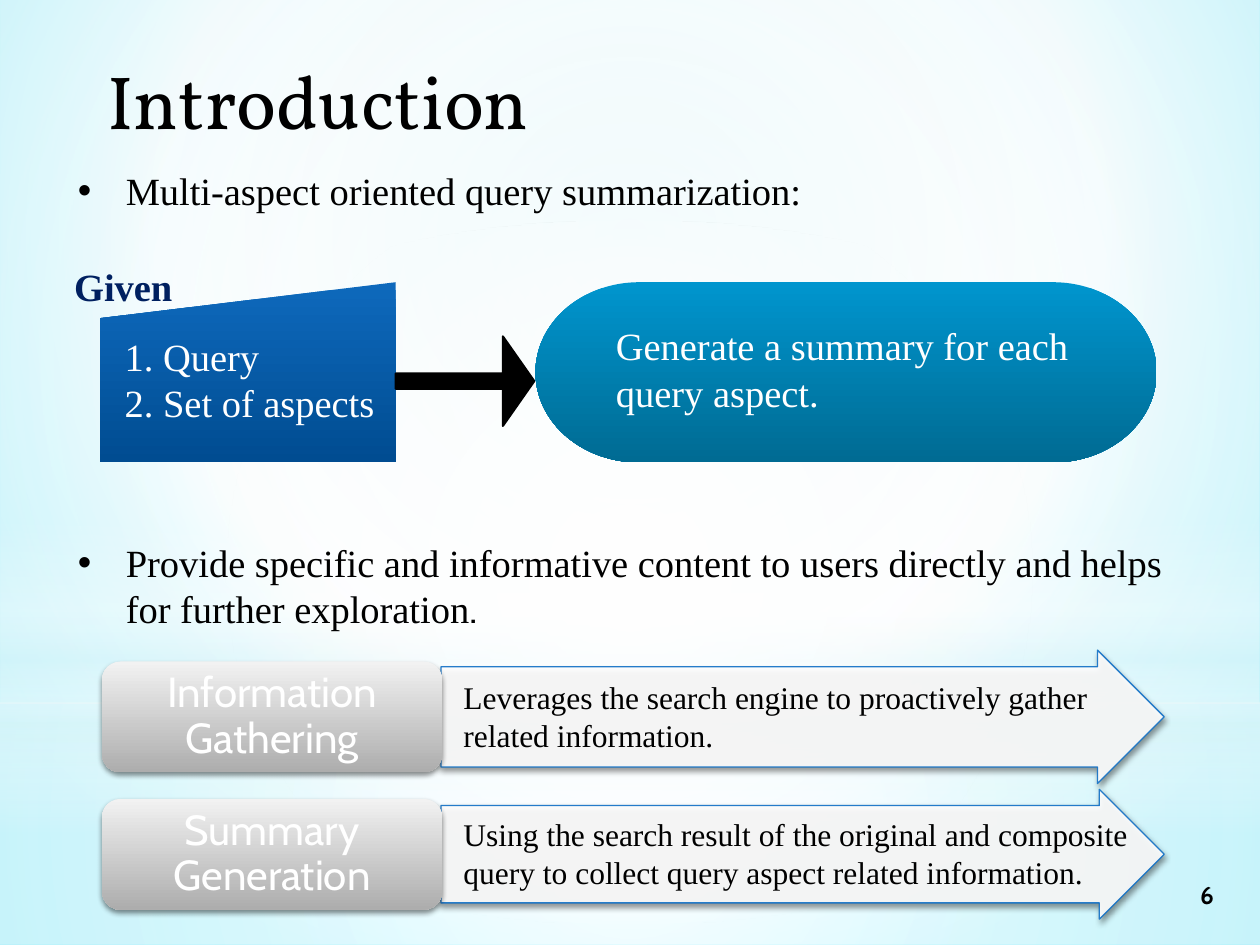
from lxml import etree
from pptx import Presentation
from pptx.dml.color import RGBColor
from pptx.enum.shapes import MSO_SHAPE as Shape
from pptx.enum.text import MSO_ANCHOR as Anchor, MSO_AUTO_SIZE as AutoSize, PP_ALIGN as Align
from pptx.oxml.ns import qn
from pptx.util import Inches, Pt

COLORS = {"black": "000000", "white": "FFFFFF", "navy": "002060", "outline": "0F6FC6",
          "sky": "CAF0F6", "cyan": "79EDFF", "mist": "DBF5F9",
          "blue": "0E69BC", "deep blue": "004C91", "teal": "0095CE", "deep teal": "006B93",
          "silver": "F2F2F2", "gray": "ADADAD"}
SERIF, SANS = "Times New Roman", "Cabin"


def set_gradient(fill, owner, stops, center=None):
    """Stops are (position, color, opacity); center gives a circular gradient."""
    fill.gradient()
    gradient = owner.find(".//" + qn("a:gradFill"))
    for child in list(gradient):
        gradient.remove(child)
    stop_list = etree.SubElement(gradient, qn("a:gsLst"))
    for position, color, opacity in stops:
        stop = etree.SubElement(stop_list, qn("a:gs"), pos=str(position * 1000))
        rgb = etree.SubElement(stop, qn("a:srgbClr"), val=COLORS[color])
        if opacity < 100:
            etree.SubElement(rgb, qn("a:alpha"), val=str(opacity * 1000))
    if center:
        path = etree.SubElement(gradient, qn("a:path"), path="circle")
        sides = {side: str(value * 1000) for side, value in zip("ltrb", center)}
        etree.SubElement(path, qn("a:fillToRect"), **sides)
    else:
        etree.SubElement(gradient, qn("a:lin"), ang="5400000", scaled="0")


def write_text(shape, lines, size, color="black", font=SERIF, bold=False,
               align=Align.LEFT, anchor=Anchor.TOP, wrap=True):
    frame = shape.text_frame
    frame.auto_size = AutoSize.NONE
    frame.word_wrap = wrap
    frame.vertical_anchor = anchor
    frame.text = "\n".join(lines)
    for paragraph in frame.paragraphs:
        paragraph.alignment = align
        paragraph.font.name = font
        paragraph.font.size = Pt(size)
        paragraph.font.bold = bold
        paragraph.font.color.rgb = RGBColor.from_string(COLORS[color])
    return frame


presentation = Presentation()
presentation.slide_width, presentation.slide_height = Inches(10), Inches(7.5)
slide = presentation.slides.add_slide(presentation.slide_layouts[5])
shapes = slide.shapes

# Background with soft light layers
set_gradient(slide.background.fill, slide.element,
             [(0, "sky", 100), (60, "white", 100), (100, "cyan", 100)], (20, 10, 20, 60))
middle = (50, 50, 50, 50)
layers = [
    (Shape.RECTANGLE, 5.58, 1.92, middle, [(0, "white", 91), (37, "white", 76), (100, "mist", 79)]),
    (Shape.RECTANGLE, 0, 5.58, middle, [(0, "white", 89), (48, "white", 62), (100, "mist", 79)]),
    (Shape.RECTANGLE, 4.12, 2.5, None, [(0, "white", 0), (29, "white", 30), (45, "mist", 40),
                                        (55, "white", 26), (65, "mist", 60), (100, "white", 0)]),
    (Shape.OVAL, 1.75, 5.58, middle, [(0, "white", 100), (56, "white", 0)]),
]
for kind, top, height, center, stops in layers:
    layer = shapes.add_shape(kind, 0, Inches(top), Inches(10), Inches(height))
    layer.shadow.inherit = False
    layer.line.fill.background()
    set_gradient(layer.fill, layer.element.spPr, stops, center)

# Title, in front of the layers
title = shapes.title
title.left, title.top, title.width, title.height = Inches(0.75), Inches(0.38), Inches(7.92), Inches(0.93)
write_text(title, ["Introduction"], 43, font="Vollkorn")
layer.element.addnext(title.element)

# Slide number
number = shapes.add_textbox(Inches(9.09), Inches(6.9), Inches(0.98), Inches(0.4))
write_text(number, ["6"], 14, font=SANS, bold=True, align=Align.CENTER, anchor=Anchor.MIDDLE)

# Bullets, with room for the diagram between them
bullets = shapes.add_textbox(Inches(0.52), Inches(1.28), Inches(9.05), Inches(3.87))
frame = write_text(bullets, [
    "Multi-aspect oriented query summarization:",
    "Provide specific and informative content to users directly and helps for further exploration",
], 22)
for paragraph in frame.paragraphs:
    properties = paragraph._p.get_or_add_pPr()
    properties.set("marL", str(Inches(0.38)))
    properties.set("indent", str(-Inches(0.38)))
    bullet_font = etree.Element(qn("a:buFont"), typeface="Arial")
    bullet = etree.Element(qn("a:buChar"), char="•")
    properties.find(qn("a:defRPr")).addprevious(bullet_font)
    bullet_font.addnext(bullet)
frame.paragraphs[1].space_before = Pt(186)
period = frame.paragraphs[1].add_run()
period.text = "."
period.font.name = SANS

# Diagram: input, output and the arrow between them
for kind, left, width, stops in [
    (Shape.FLOWCHART_MANUAL_INPUT, 0.79, 2.35, [(0, "blue", 100), (100, "deep blue", 100)]),
    (Shape.FLOWCHART_DIRECT_ACCESS_STORAGE, 4.25, 4.93, [(0, "teal", 100), (100, "deep teal", 100)]),
]:
    block = shapes.add_shape(kind, Inches(left), Inches(2.24), Inches(width), Inches(1.43))
    block.shadow.inherit = False
    block.line.fill.background()
    set_gradient(block.fill, block.element.spPr, stops)

arrow = shapes.add_shape(Shape.RIGHT_ARROW, Inches(3.14), Inches(2.67), Inches(1.1), Inches(0.71))
arrow.shadow.inherit = False
arrow.adjustments[0], arrow.adjustments[1] = 0.17, 0.35
arrow.fill.solid()
arrow.fill.fore_color.rgb = arrow.line.color.rgb = RGBColor.from_string(COLORS["black"])
arrow.line.width = Pt(1.25)

summary = shapes.add_textbox(Inches(4.79), Inches(2.51), Inches(3.91), Inches(0.84))
write_text(summary, ["Generate a summary for each", "query aspect."], 22, "white", wrap=False)
given = shapes.add_textbox(Inches(0.49), Inches(2.04), Inches(0.99), Inches(0.47))
write_text(given, ["Given"], 22, "navy", bold=True, wrap=False)
inputs = shapes.add_textbox(Inches(0.75), Inches(2.59), Inches(2.36), Inches(0.84))
frame = write_text(inputs, ["1. Query", "2. Set of aspects"], 22, "white")
frame.margin_left, frame.margin_right = Inches(0.24), 0

# Two steps: label and arrow with its explanation
steps = [
    ("Information Gathering", 5.69, 1.06,
     "Leverages the search engine to proactively gather related information."),
    ("Summary Generation", 6.78, 1.03,
     "Using the search result of the original and composite query to collect query aspect "
     "related information."),
]
for name, middle_y, arrow_height, explanation in steps:
    step_arrow = shapes.add_shape(Shape.RIGHT_ARROW, Inches(3.5), Inches(middle_y - arrow_height / 2),
                                  Inches(5.74), Inches(arrow_height))
    step_arrow.adjustments[0] = 0.75
    step_arrow.fill.solid()
    step_arrow.fill.fore_color.rgb = RGBColor.from_string(COLORS["white"])
    step_arrow.line.color.rgb = RGBColor.from_string(COLORS["outline"])
    step_arrow.line.width = Pt(0.75)
    for rgb in step_arrow.element.spPr.iter(qn("a:srgbClr")):
        etree.SubElement(rgb, qn("a:alpha"), val="90000")

    label = shapes.add_shape(Shape.ROUNDED_RECTANGLE, Inches(0.81), Inches(middle_y - 0.44),
                             Inches(2.7), Inches(0.88))
    label.line.fill.background()
    set_gradient(label.fill, label.element.spPr, [(0, "silver", 100), (100, "gray", 100)])
    frame = write_text(label, [name], 24, "white", SANS, align=Align.CENTER, anchor=Anchor.MIDDLE)
    frame.paragraphs[0].line_spacing = 0.9

    for shape in (step_arrow, label):
        shape.shadow.inherit = False
        effects = shape.element.spPr.find(qn("a:effectLst"))
        shadow = etree.SubElement(effects, qn("a:outerShdw"), blurRad=str(Pt(3.1)),
                                  dist=str(Pt(1.8)), dir="5400000", rotWithShape="0")
        rgb = etree.SubElement(shadow, qn("a:srgbClr"), val=COLORS["black"])
        etree.SubElement(rgb, qn("a:alpha"), val="45000")

    note = shapes.add_textbox(Inches(3.58), Inches(middle_y - 0.36), Inches(5.59), Inches(0.71))
    write_text(note, [explanation], 18)

presentation.save("out.pptx")
